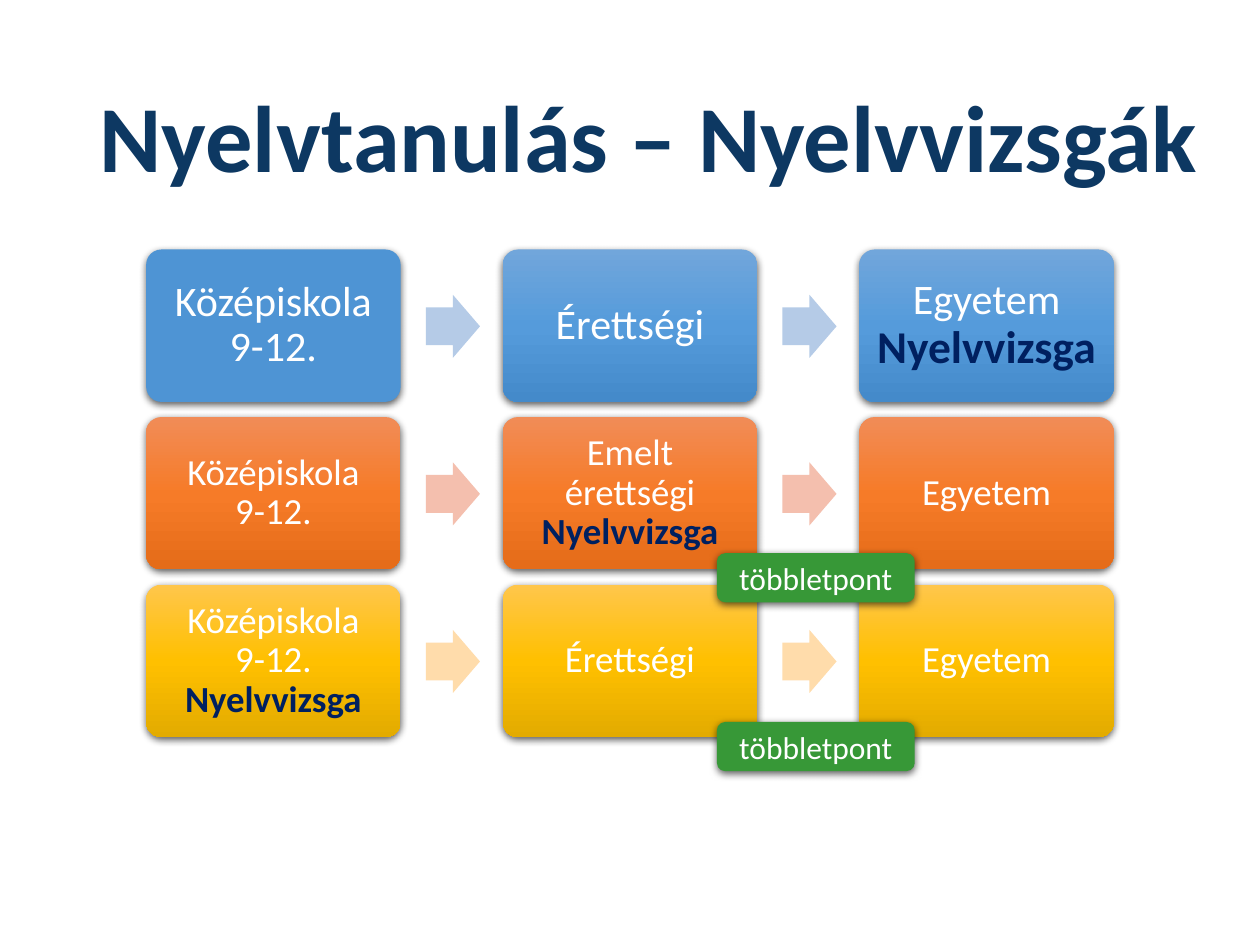
from lxml import etree
from pptx import Presentation
from pptx.dml.color import RGBColor as RGB
from pptx.enum.shapes import MSO_SHAPE as SHAPE
from pptx.enum.text import MSO_ANCHOR as ANCHOR, PP_ALIGN as ALIGN
from pptx.oxml import parse_xml
from pptx.util import Inches, Pt

NS = "http://schemas.openxmlformats.org/drawingml/2006/main"
COLORS = {"title": "0D3862", "exam": "002060", "text": "FFFFFF", "bonus": "379837",
          "school": "4E94D4", "shadow": "000000"}
ROWS = [
    {"grad": ("71A6DB", "559BDB", "448ACA"), "arrow": "B5CBE7", "size": 24,
     "exam_size": 26, "inset": 0.09,
     "steps": [("Középiskola\v9-12.", ""), ("Érettségi", ""), ("Egyetem", "Nyelvvizsga")]},
    {"grad": ("F18C57", "F67B28", "E56C19"), "arrow": "F4BFAE", "size": 21,
     "exam_size": 21, "inset": 0.1,
     "steps": [("Középiskola\v9-12.", ""), ("Emelt érettségi", "Nyelvvizsga"), ("Egyetem", "")]},
    {"grad": ("FFC64B", "FFC000", "E3AB00"), "arrow": "FFDCAB", "size": 21,
     "exam_size": 21, "inset": 0.1,
     "steps": [("Középiskola\v9-12.", "Nyelvvizsga"), ("Érettségi", ""), ("Egyetem", "")]},
]


def add_block(kind, x, y, w, h, color, shadow=True):
    sp = slide.shapes.add_shape(kind, Inches(x), Inches(y), Inches(w), Inches(h))
    sp.line.fill.background()
    sp.shadow.inherit = False
    if isinstance(color, tuple):
        stops = "".join(f'<a:gs pos="{i * 50000}"><a:srgbClr val="{c}"/></a:gs>'
                        for i, c in enumerate(color))
        sp._element.spPr.find(f"{{{NS}}}prstGeom").addnext(parse_xml(
            f'<a:gradFill xmlns:a="{NS}" rotWithShape="1"><a:gsLst>{stops}</a:gsLst>'
            '<a:lin ang="5400000" scaled="0"/></a:gradFill>'))
    else:
        sp.fill.solid()
        sp.fill.fore_color.rgb = RGB.from_string(color)
    if shadow:
        effects = sp._element.spPr.find(f"{{{NS}}}effectLst")
        outer = etree.SubElement(effects, f"{{{NS}}}outerShdw", blurRad=str(Pt(4.5)),
                                 dist=str(Pt(1.5)), dir="5400000", algn="ctr", rotWithShape="0")
        clr = etree.SubElement(outer, f"{{{NS}}}srgbClr", val=COLORS["shadow"])
        etree.SubElement(clr, f"{{{NS}}}alpha", val="63000")
    return sp


def format_run(r, size, color, bold=False):
    r.font.name = "Calibri"
    r.font.size = Pt(size)
    r.font.bold = bold
    r.font.color.rgb = RGB.from_string(COLORS[color])


prs = Presentation()
prs.slide_width, prs.slide_height = Inches(10), Inches(7.5)
slide = prs.slides.add_slide(prs.slide_layouts[5])

title = slide.shapes.title
title.left, title.top = Inches(0.69), Inches(0.4)
title.width, title.height = Inches(8.99), Inches(1.45)
title.text_frame.text = "Nyelvtanulás – Nyelvvizsgák"
title.text_frame.vertical_anchor = ANCHOR.MIDDLE
p = title.text_frame.paragraphs[0]
p.alignment = ALIGN.LEFT
p.line_spacing = 0.9
format_run(p.runs[0], 54, "title", True)

for i, row in enumerate(ROWS):
    y = 1.98 + i * 1.33
    for j, (step, exam) in enumerate(row["steps"]):
        x = 1.16 + j * 2.83
        color = COLORS["school"] if i == j == 0 else row["grad"]
        box = add_block(SHAPE.ROUNDED_RECTANGLE, x, y, 2.02, 1.21, color)
        box.adjustments[0] = 0.1
        tf = box.text_frame
        tf.word_wrap = True
        tf.vertical_anchor = ANCHOR.MIDDLE
        tf.margin_left = tf.margin_right = Inches(row["inset"])
        tf.margin_top = tf.margin_bottom = Inches(row["inset"])
        p = tf.paragraphs[0]
        p.text = step
        p.alignment = ALIGN.CENTER
        p.line_spacing = 0.9
        for r in p.runs:
            format_run(r, row["size"], "text")
        if exam:
            p.add_line_break()
            r = p.add_run()
            r.text = exam
            format_run(r, row["exam_size"], "exam", True)
        if j < 2:
            arrow = add_block(SHAPE.RIGHT_ARROW, x + 2.22, y + 0.36, 0.43, 0.5,
                              row["arrow"], shadow=False)
            arrow.adjustments[0] = 0.6

for y in (4.39, 5.73):
    bonus = add_block(SHAPE.ROUNDED_RECTANGLE, 5.69, y, 1.57, 0.39, COLORS["bonus"])
    tf = bonus.text_frame
    tf.text = "többletpont"
    tf.vertical_anchor = ANCHOR.MIDDLE
    tf.paragraphs[0].alignment = ALIGN.CENTER
    format_run(tf.paragraphs[0].runs[0], 18, "text")

prs.save("out.pptx")
